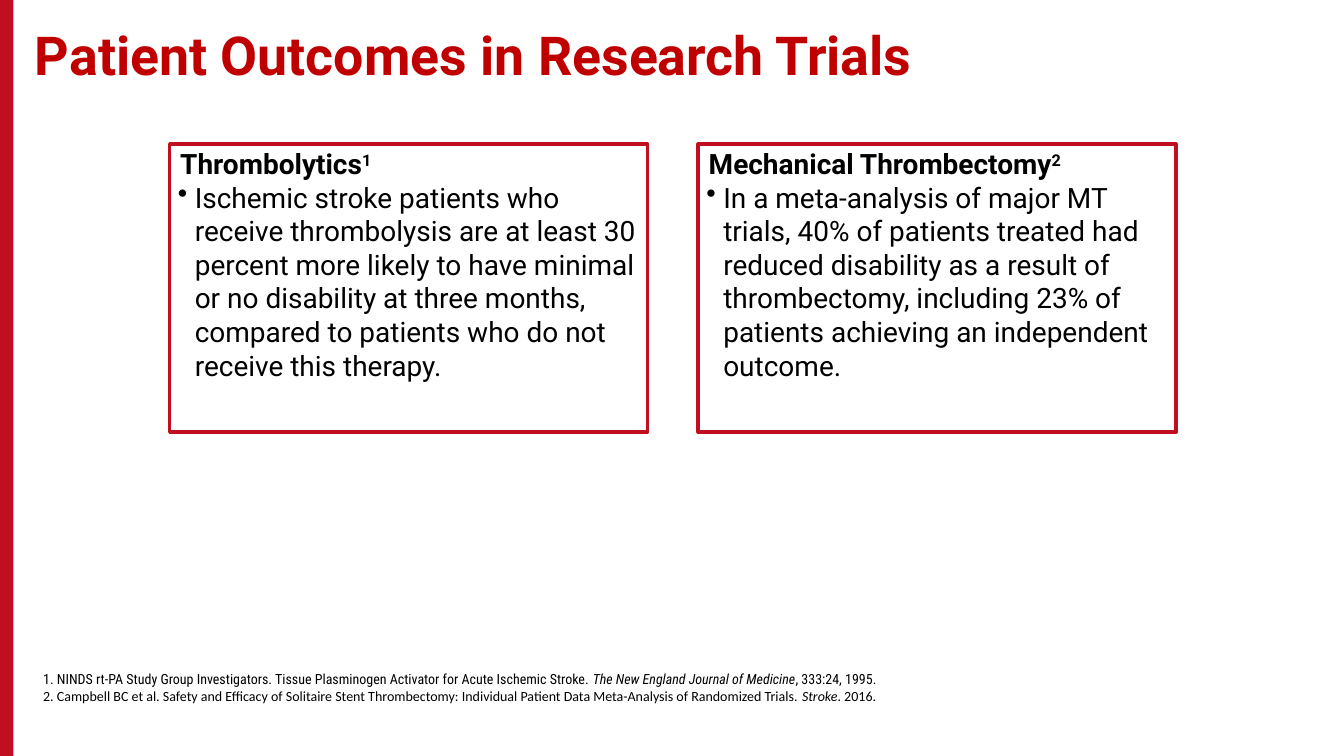
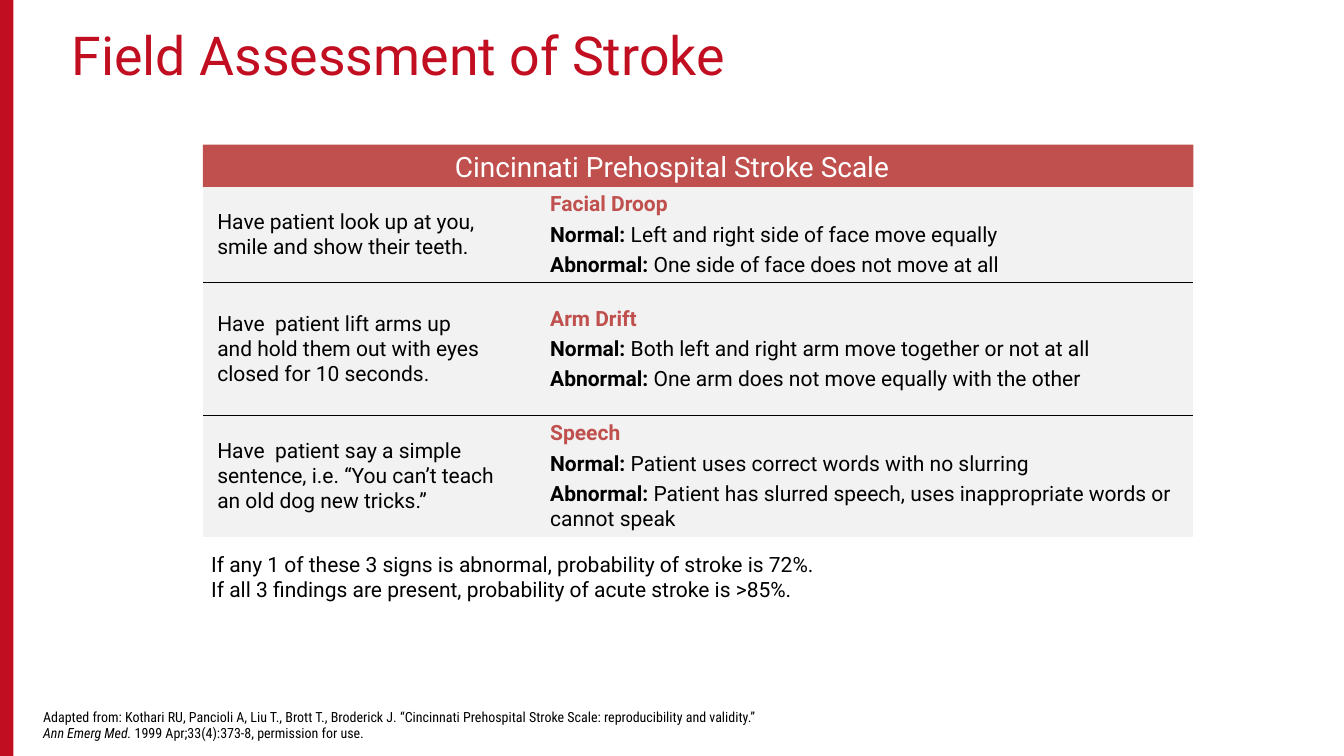
import lxml.etree
import pptx
import pptx.dml.color
import pptx.enum.shapes
import pptx.enum.text
import pptx.oxml.ns
import pptx.util

Pt = pptx.util.Pt
RGBColor = pptx.dml.color.RGBColor
qn = pptx.oxml.ns.qn
RECTANGLE = pptx.enum.shapes.MSO_SHAPE.RECTANGLE
MIDDLE = pptx.enum.text.MSO_ANCHOR.MIDDLE
CENTER = pptx.enum.text.PP_ALIGN.CENTER

RED = RGBColor(0xC1, 0x0E, 0x21)
DARK_RED = RGBColor(0xC0, 0x00, 0x00)
BRICK = RGBColor(0xC0, 0x50, 0x4D)
PALE_GREY = RGBColor(0xF2, 0xF2, 0xF2)
WHITE = RGBColor(0xFF, 0xFF, 0xFF)
BLACK = RGBColor(0, 0, 0)

TITLE = {"name": "Roboto", "size": Pt(46), "color": RED}
CARD = {"name": "Roboto", "size": Pt(24), "color": BLACK}
BODY = {**CARD, "size": Pt(18)}
NOTE = {"name": "Roboto Condensed", "size": Pt(12), "color": BLACK}
BOLD = {"bold": True}
ITALIC = {"italic": True}
NO_STYLE_NO_GRID = "{2D5ABB26-0587-4C30-8999-92F81FD0307C}"


def write_text(frame, paragraphs, look):
    """Fill a frame; each paragraph is (layout, spans), each span (text, changes to look)."""
    frame.word_wrap = True
    for number, (layout, spans) in enumerate(paragraphs):
        para = frame.add_paragraph() if number else frame.paragraphs[0]
        for key, value in layout.items():
            if key in ("marL", "indent"):
                para._p.get_or_add_pPr().set(key, str(value))
            elif key == "bullet":
                bullet = lxml.etree.SubElement(para._p.get_or_add_pPr(), qn("a:buChar"))
                bullet.set("char", value)
            else:
                setattr(para, key, value)
        for text, changes in spans:
            for index, piece in enumerate(text.split("\n")):
                if index:
                    para.add_line_break()
                span = para.add_run()
                span.text = piece
                for key, value in {**look, **changes}.items():
                    if key == "color":
                        span.font.color.rgb = value
                    elif key == "baseline":
                        span.font._element.set(key, value)
                    else:
                        setattr(span.font, key, value)


def add_text_box(slide, place, paragraphs, look):
    box = slide.shapes.add_textbox(*map(Pt, place))
    for side in ("left", "top", "right", "bottom"):
        setattr(box.text_frame, f"margin_{side}", 0)
    write_text(box.text_frame, paragraphs, look)
    return box


deck = pptx.Presentation()
deck.slide_width, deck.slide_height = Pt(1152), Pt(648)

# Side bar and title of every slide
pages = []
for title, left, changes in [
    ("Patient Outcomes in Research Trials", 30, {"color": DARK_RED, "bold": True}),
    ("Field Assessment of Stroke", 61.5, {}),
]:
    page = deck.slides.add_slide(deck.slide_layouts[6])
    bar = page.shapes.add_shape(RECTANGLE, 0, 0, Pt(11.5), deck.slide_height)
    bar.shadow.inherit = False
    bar.fill.solid()
    bar.fill.fore_color.rgb = RED
    bar.line.fill.background()
    add_text_box(page, (left, 25, 1060, 50),
                 [({"line_spacing": 0.9}, [(title, changes)])], TITLE)
    pages.append(page)
outcomes, assessment = pages

# Slide 1: two outcome cards
cards = [
    ("Thrombolytics", "1",
     "Ischemic stroke patients who\nreceive thrombolysis are at least 30 percent more likely to have "
     "minimal or no disability at three months, compared to patients who do not receive this therapy."),
    ("Mechanical Thrombectomy", "2",
     "In a meta-analysis of major MT trials, 40% of patients treated had reduced disability as a "
     "result of thrombectomy, including 23% of patients achieving an independent outcome."),
]
for column, (heading, reference, finding) in enumerate(cards):
    card = add_text_box(
        outcomes, (145.5 + 453 * column, 123.5, 409.5, 247),
        [({"marL": Pt(9), "indent": 0},
          [(heading, BOLD), (reference, {"bold": True, "baseline": "30000"})]),
         ({"marL": Pt(21.5), "indent": Pt(-14.5), "bullet": "•"}, [(finding, {})])],
        CARD)
    card.text_frame.margin_top = Pt(2)
    card.line.color.rgb = RED
    card.line.width = Pt(3)

CALIBRI = {"name": "Calibri"}
add_text_box(
    outcomes, (37, 575, 807, 30),
    [({}, [("1. NINDS rt-PA Study Group Investigators. Tissue Plasminogen Activator for Acute "
            "Ischemic Stroke. ", {}),
           ("The New England Journal of Medicine", ITALIC), (", 333:24, 1995.", {})]),
     ({}, [("2. Campbell BC et al. Safety and Efficacy of Solitaire Stent Thrombectomy: Individual "
            "Patient Data Meta-Analysis of Randomized Trials. ", CALIBRI),
           ("Stroke", {**CALIBRI, **ITALIC}), (". 2016.", CALIBRI)])],
    NOTE)

# Slide 2: stroke scale under its heading band
TABLE_LEFT, TABLE_WIDTH = 174, 849
band = assessment.shapes.add_shape(RECTANGLE, *map(Pt, (TABLE_LEFT, 124, TABLE_WIDTH, 36.5)))
band.shadow.inherit = False
band.fill.solid()
band.fill.fore_color.rgb = BRICK
band.line.fill.background()
for key, value in {"margin_left": 0, "margin_right": Pt(45), "margin_top": 0,
                   "margin_bottom": 0, "vertical_anchor": MIDDLE}.items():
    setattr(band.text_frame, key, value)
write_text(band.text_frame,
           [({"alignment": CENTER}, [("Cincinnati Prehospital Stroke Scale", {})])],
           {**CARD, "color": WHITE})

signs = [
    (82, "Have patient look up at you,\nsmile and show their teeth.", "Facial Droop",
     "Left and right side of face move equally", "One side of face does not move at all"),
    (114, "Have  patient lift arms up\nand hold them out with eyes\nclosed for 10 seconds.", "Arm Drift",
     "Both left and right arm move together or not at all",
     "One arm does not move equally with the other"),
    (103.5, "Have  patient say a simple sentence, i.e. “You can’t teach\nan old dog new tricks.”", "Speech",
     "Patient uses correct words with no slurring",
     "Patient has slurred speech, uses inappropriate words or cannot speak"),
]
height = sum(sign[0] for sign in signs)
scale = assessment.shapes.add_table(
    len(signs), 2, *map(Pt, (TABLE_LEFT, 160.5, TABLE_WIDTH, height))).table
scale.first_row = scale.horz_banding = False
scale._tbl.tblPr.find(qn("a:tableStyleId")).text = NO_STYLE_NO_GRID
for column, width in zip(scale.columns, (294, 555)):
    column.width = Pt(width)

GAP = {"space_before": Pt(5)}
for number, (row_height, instruction, sign, normal, abnormal) in enumerate(signs):
    scale.rows[number].height = Pt(row_height)
    contents = [
        (12.25, [({}, [(instruction, {})])]),
        (3.6, [({}, [(sign, {"bold": True, "color": BRICK})]),
               (GAP, [("Normal: ", BOLD), (normal, {})]),
               (GAP, [("Abnormal: ", BOLD), (abnormal, {})])]),
    ]
    for cell, (margin, paragraphs) in zip(scale.rows[number].cells, contents):
        for key, value in {"margin_left": Pt(margin), "margin_right": Pt(3.6), "margin_top": Pt(3.6),
                           "margin_bottom": Pt(3.6), "vertical_anchor": MIDDLE}.items():
            setattr(cell, key, value)
        cell.fill.solid()
        cell.fill.fore_color.rgb = PALE_GREY
        write_text(cell.text_frame, paragraphs, BODY)
        if number < len(signs) - 1:
            border = lxml.etree.Element(qn("a:lnB"), w=str(Pt(1)))
            stroke = lxml.etree.SubElement(border, qn("a:solidFill"))
            lxml.etree.SubElement(stroke, qn("a:srgbClr"), val=str(BLACK))
            cell._tc.get_or_add_tcPr().insert(0, border)

add_text_box(
    assessment, (181, 472.5, 837, 44),
    [({}, [("If any 1 of these 3 signs is abnormal, probability of stroke is 72%.\n"
            "If all 3 findings are present, probability of acute stroke is >85%.", {})])],
    BODY)
add_text_box(
    assessment, (37, 607, 650, 30),
    [({}, [("Adapted from: Kothari RU, Pancioli A, Liu T., Brott T., Broderick J. “Cincinnati "
            "Prehospital Stroke Scale: reproducibility and validity.”", {})]),
     ({}, [("Ann Emerg Med. ", ITALIC), ("1999 Apr;33(4):373-8, permission for use.", {})])],
    NOTE)

deck.save("out.pptx")
